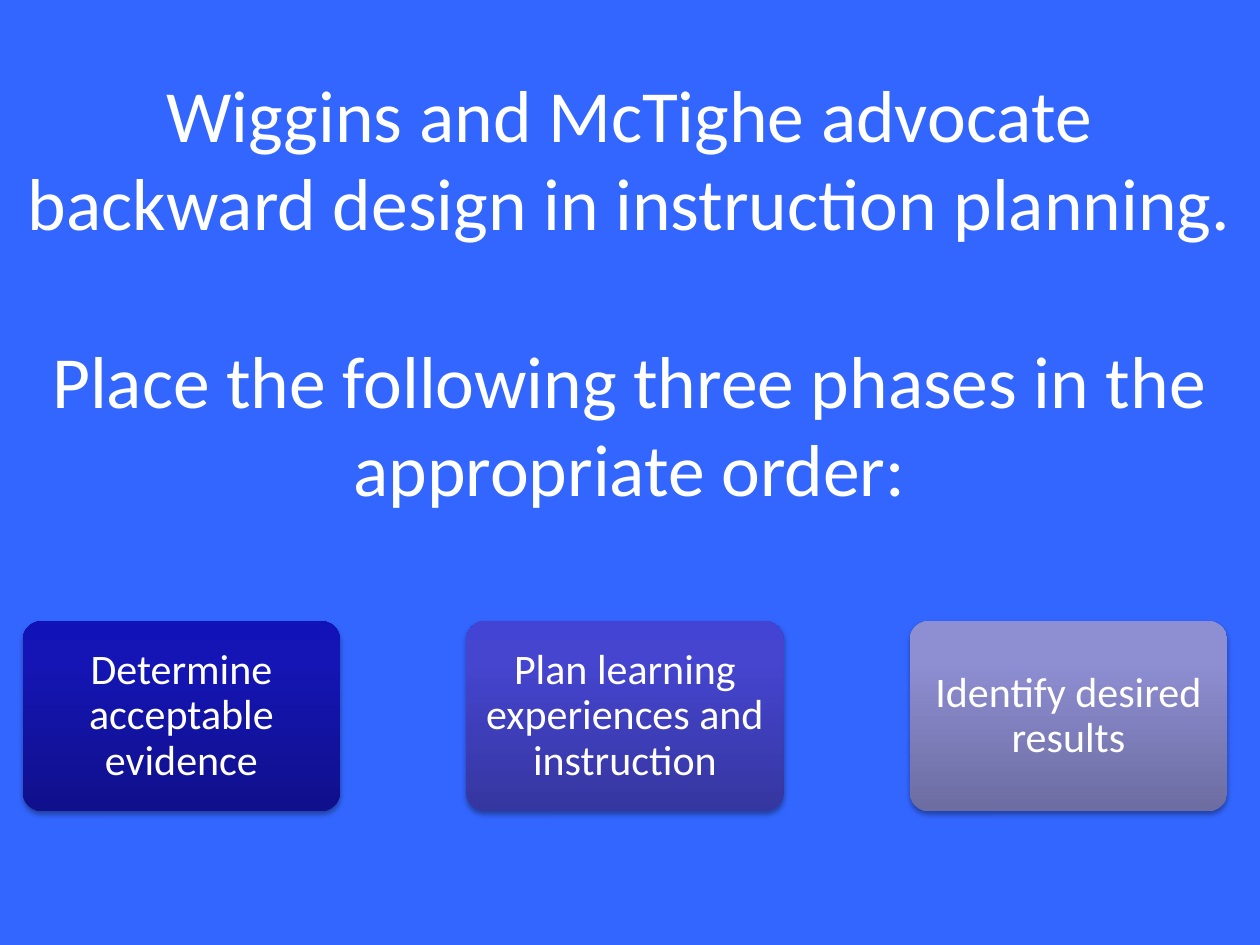
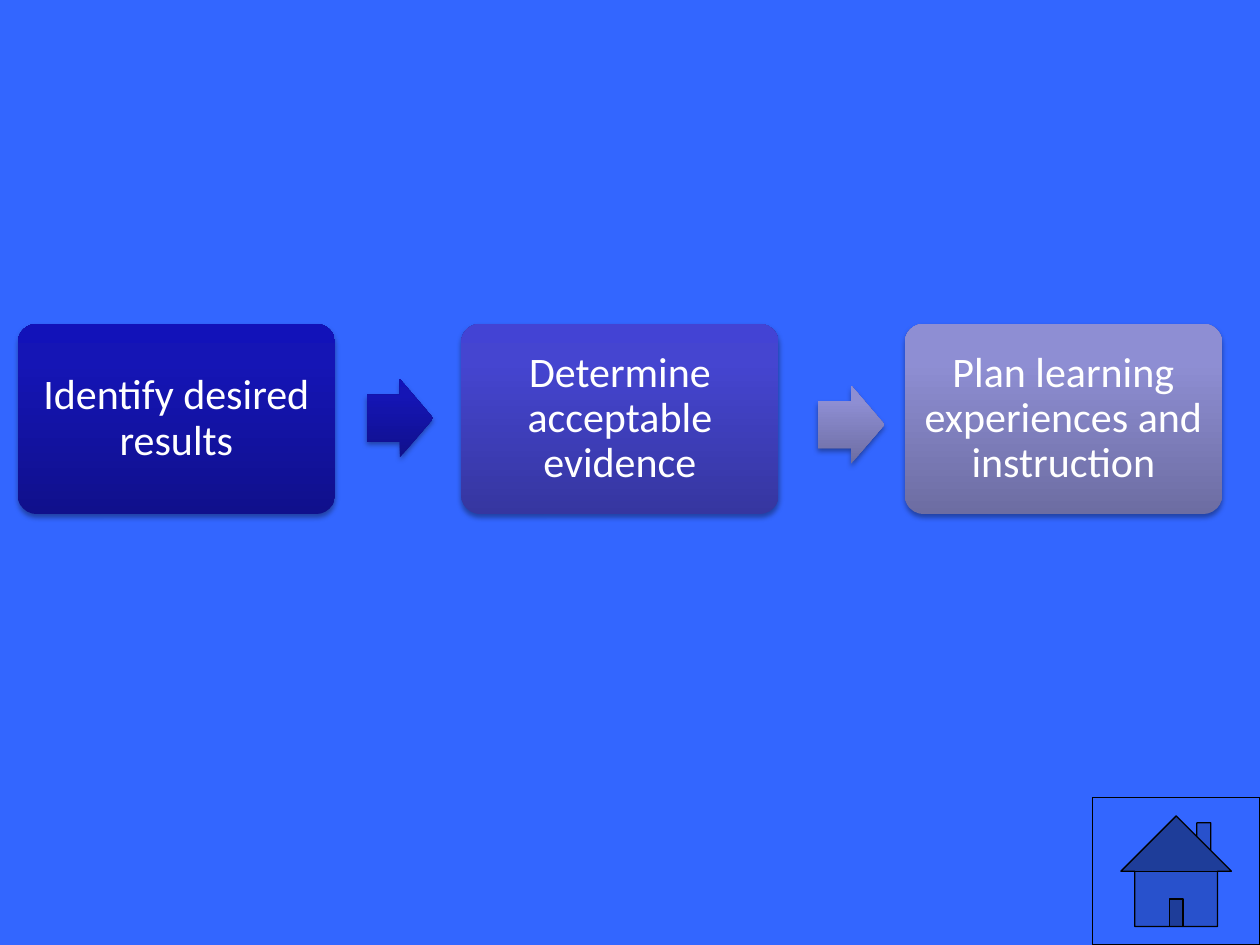
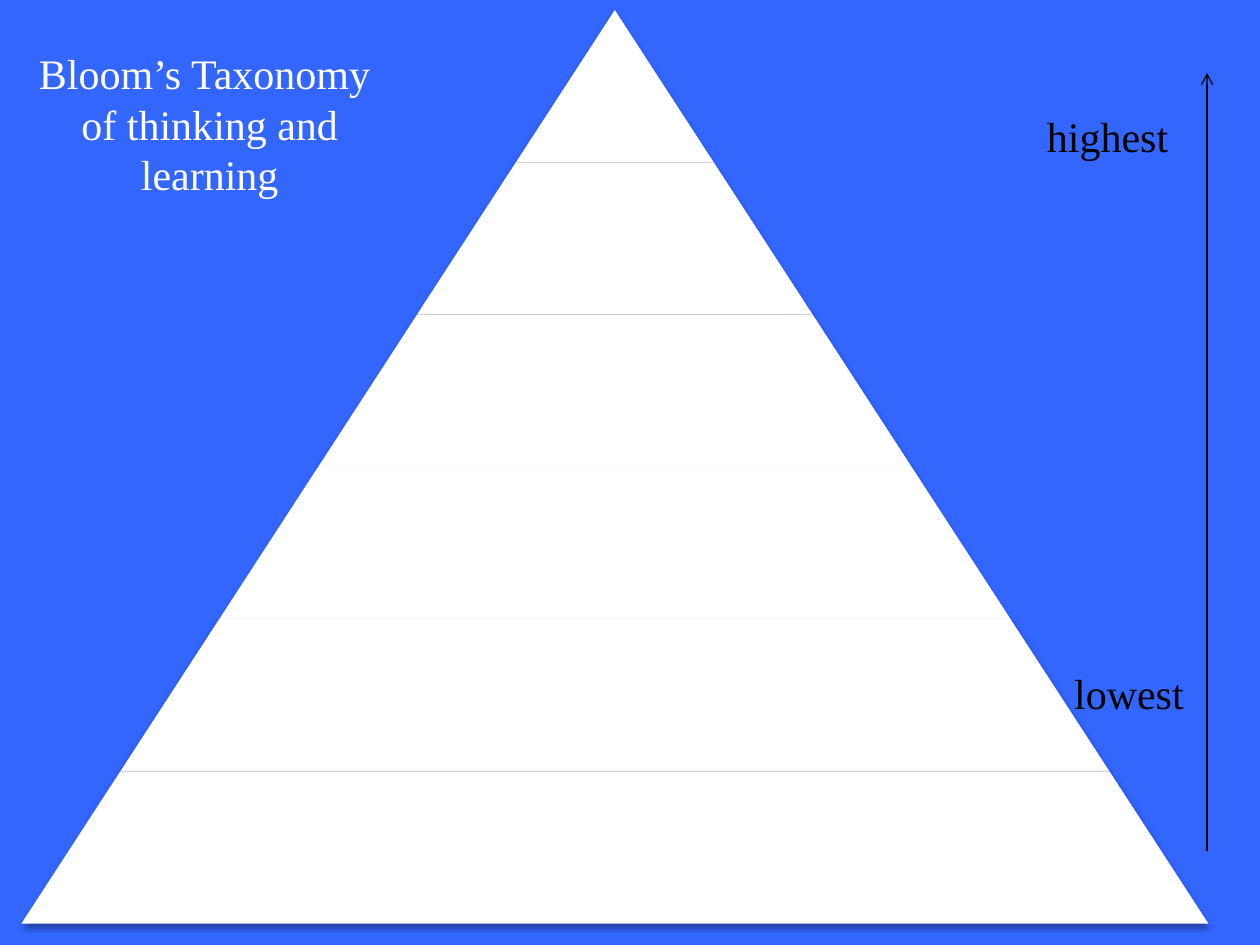
from copy import deepcopy
from dataclasses import dataclass

from lxml import etree
from pptx import Presentation
from pptx.dml.color import RGBColor
from pptx.enum.shapes import MSO_CONNECTOR, MSO_SHAPE
from pptx.enum.text import MSO_ANCHOR, MSO_AUTO_SIZE, PP_ALIGN
from pptx.oxml.ns import qn
from pptx.util import Inches, Pt

ROUNDED = MSO_SHAPE.ROUNDED_RECTANGLE
ARROW = MSO_SHAPE.RIGHT_ARROW
TRAPEZOID = MSO_SHAPE.TRAPEZOID
HOME = MSO_SHAPE.ACTION_BUTTON_HOME
STRAIGHT = MSO_CONNECTOR.STRAIGHT
CENTER = PP_ALIGN.CENTER
MIDDLE = MSO_ANCHOR.MIDDLE
GROW = MSO_AUTO_SIZE.SHAPE_TO_FIT_TEXT


@dataclass(frozen=True)
class Theme:
    background: str = "3366FF"
    white: str = "FFFFFF"
    black: str = "000000"
    # Gradients run from the bottom edge to the top edge
    navy: tuple = ("10108C", "1515B5", "1212B9")
    violet: tuple = ("3636A0", "4545D0", "4343D4")
    lavender: tuple = ("6D6DA2", "8E8ED3", "8D8DD5")
    stops: tuple = (0, 0.8, 1)
    sans: str = "Calibri"
    serif: str = "Times New Roman"
    question_size: int = 42
    body_size: int = 24
    line_width: float = 0.75


THEME = Theme()
PHASE_COLORS = (THEME.navy, THEME.violet, THEME.lavender)
PHASE_SIZE = (2.52, 1.51)
PHASE_PITCH = 3.52

IDENTIFY = "Identify desired results"
DETERMINE = "Determine acceptable evidence"
PLAN = "Plan learning experiences and instruction"


def rgb(value):
    return RGBColor.from_string(value)


# Text
def write(tf, paragraphs, font, size, color, **spacing):
    """Fill a text frame with centred paragraphs."""
    tf.word_wrap = True
    for i, text in enumerate(paragraphs):
        p = tf.paragraphs[0] if i == 0 else tf.add_paragraph()
        for name, value in {"alignment": CENTER, **spacing}.items():
            setattr(p, name, value)
        r = p.add_run()
        r.text = text
        for name, value in {"name": font, "size": Pt(size)}.items():
            setattr(r.font, name, value)
        r.font.color.rgb = rgb(color)


def add_text(slide, box, paragraphs, font=THEME.serif, size=THEME.body_size,
             color=THEME.black):
    tf = slide.shapes.add_textbox(*map(Inches, box)).text_frame
    write(tf, paragraphs, font, size, color)
    tf.auto_size = GROW
    return tf


# Shapes
def add_shape(slide, kind, box, fill, adjustments=()):
    """Add an unlined shape; a tuple as fill gives a vertical gradient."""
    sp = slide.shapes.add_shape(kind, *map(Inches, box))
    for i, value in enumerate(adjustments):
        sp.adjustments[i] = value
    sp.line.fill.background()
    sp.shadow.inherit = False
    if isinstance(fill, tuple):
        set_gradient(sp, fill)
    else:
        sp.fill.solid()
        sp.fill.fore_color.rgb = rgb(fill)
    return sp


def set_gradient(sp, colors):
    sp.fill.gradient()
    sp.fill.gradient_angle = 90
    stop_list = sp._element.spPr.find(".//" + qn("a:gsLst"))
    stop_list.append(deepcopy(stop_list[-1]))
    for stop, position, color in zip(sp.fill.gradient_stops, THEME.stops, colors):
        stop.position = position
        stop.color.rgb = rgb(color)


def add_shadow(sp):
    """Give a shape a soft shadow straight below it."""
    effects = sp._element.spPr.find(qn("a:effectLst"))
    shadow = etree.SubElement(effects, qn("a:outerShdw"), blurRad=str(Pt(3.1)),
                              dist=str(Pt(1.8)), dir="5400000", rotWithShape="0")
    color = etree.SubElement(shadow, qn("a:srgbClr"), val=THEME.black)
    etree.SubElement(color, qn("a:alpha"), val="35000")


def add_phases(slide, left, top, phases):
    for i, (phase, fill) in enumerate(zip(phases, PHASE_COLORS)):
        box = (left + i * PHASE_PITCH, top, *PHASE_SIZE)
        sp = add_shape(slide, ROUNDED, box, fill, [0.1])
        add_shadow(sp)
        tf = sp.text_frame
        for side in ("left", "top", "right", "bottom"):
            setattr(tf, f"margin_{side}", Inches(0.1))
        tf.vertical_anchor = MIDDLE
        write(tf, [phase], THEME.sans, THEME.body_size, THEME.white,
              line_spacing=0.9)


def add_pyramid(slide, left, top, width, height, levels):
    step = height / levels
    for i in range(levels):
        level_width = width * (i + 1) / levels
        box = (left + (width - level_width) / 2, top + i * step, level_width, step)
        add_shadow(add_shape(slide, TRAPEZOID, box, THEME.white,
                             [width / height / 2]))


def add_arrow_line(slide, start, end):
    line = slide.shapes.add_connector(STRAIGHT, *map(Inches, (*start, *end)))
    line.line.color.rgb = rgb(THEME.black)
    line.line.width = Pt(THEME.line_width)
    etree.SubElement(line.line._get_or_add_ln(), qn("a:tailEnd"), type="arrow")
    etree.SubElement(line._element.spPr, qn("a:effectLst"))


# Slides
def build_question(slide):
    tf = add_text(slide, (0.08, 0.5, 9.83, 2.93),
                  ["Wiggins and McTighe advocate backward design in instruction planning.",
                   "Place the following three phases in the appropriate order:"],
                  THEME.sans, THEME.question_size, THEME.white)
    tf.paragraphs[1].space_before = Pt(51)
    add_phases(slide, 0.18, 4.93, [DETERMINE, PLAN, IDENTIFY])


def build_answer(slide):
    home = add_shape(slide, HOME, (8.67, 6.33, 1.33, 1.17), THEME.background)
    home.line.color.rgb = rgb(THEME.black)
    home.line.width = Pt(THEME.line_width)
    add_phases(slide, 0.14, 2.57, [IDENTIFY, DETERMINE, PLAN])
    for left, top, fill in ((2.91, 3.01, THEME.navy), (6.49, 3.06, THEME.lavender)):
        add_shadow(add_shape(slide, ARROW, (left, top, 0.53, 0.62), fill, [0.6, 0.5]))


def build_taxonomy(slide):
    add_pyramid(slide, 0.17, 0.08, 9.42, 7.25, levels=6)
    add_arrow_line(slide, (9.58, 6.75), (9.58, 0.58))
    add_text(slide, (8, 0.83, 1.58, 0.51), ["highest"])
    add_text(slide, (8.17, 5.25, 1.58, 0.51), ["lowest"])
    add_text(slide, (0, 0.33, 3.33, 1.31),
             ["Bloom’s Taxonomy ", "of thinking and learning"], color=THEME.white)


def main():
    prs = Presentation()
    prs.slide_width, prs.slide_height = Inches(10), Inches(7.5)
    background = prs.slide_master.background.fill
    background.solid()
    background.fore_color.rgb = rgb(THEME.background)
    blank = prs.slide_layouts[6]
    for build in (build_question, build_answer, build_taxonomy):
        build(prs.slides.add_slide(blank))
    prs.save("out.pptx")


if __name__ == "__main__":
    main()
